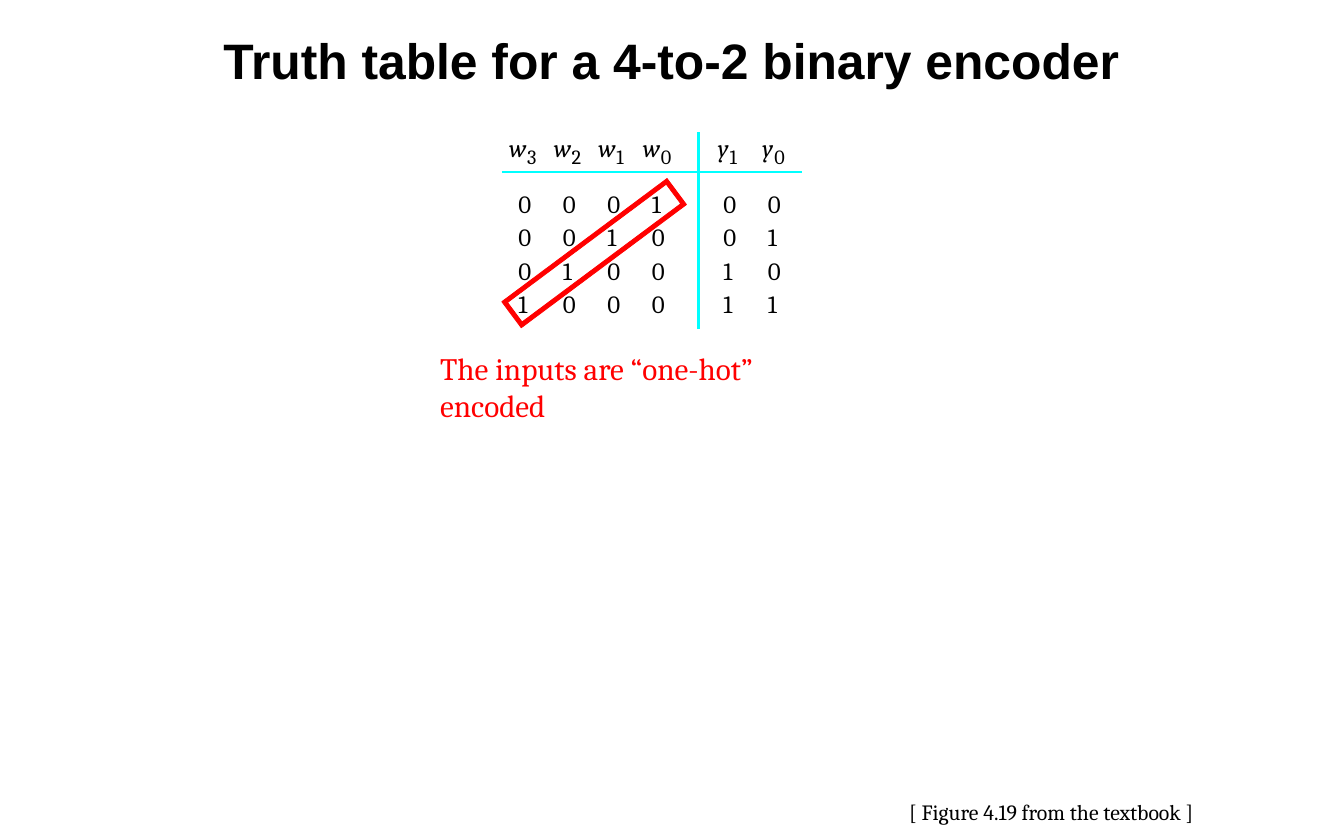
from lxml import etree
from pptx import Presentation
from pptx.dml.color import RGBColor
from pptx.enum import shapes, text
from pptx.oxml.ns import qn
from pptx.util import Pt

FONT = "Cambria"
BLACK, RED, CYAN = "000000", "FF0000", "00FFFF"

# Table grid, in points
COL_STEP, ROW_STEP = 28.65, 21.6
IN_LEFT, OUT_LEFT = 333.2, 465.1
HEAD_TOP, ROW_TOP = 85, 121

INPUTS = ["0001", "0010", "0100", "1000"]
OUTPUTS = ["00", "01", "10", "11"]


def color(value):
    return RGBColor.from_string(value)


def style(p, size, fill, font=FONT, bold=False, italic=False):
    for r in p.runs:
        f = r.font
        f.name, f.size, f.bold, f.italic = font, Pt(size), bold, italic
        f.color.rgb = color(fill)


def add_text(parent, words, x, y, w, h, size, fill=BLACK, italic=False,
             margins=(0, 0), wrap=False):
    sp = parent.add_textbox(Pt(x), Pt(y), Pt(w), Pt(h))
    tf = sp.text_frame
    tf.margin_left = tf.margin_right = Pt(margins[0])
    tf.margin_top = tf.margin_bottom = Pt(margins[1])
    tf.word_wrap = wrap
    tf.auto_size = text.MSO_AUTO_SIZE.SHAPE_TO_FIT_TEXT
    tf.text = words
    style(tf.paragraphs[0], size, fill, italic=italic)


def add_rule(parent, x1, y1, x2, y2):
    line = parent.add_connector(shapes.MSO_CONNECTOR.STRAIGHT,
                                Pt(x1), Pt(y1), Pt(x2), Pt(y2))
    line.line.color.rgb = color(CYAN)
    line.line.width = Pt(1.75)
    etree.SubElement(line._element.spPr, qn("a:effectLst"))


def add_columns(parent, letter, rows, left, indent, sub_gap):
    """Columns of bits under subscripted variable names, highest index first."""
    count = len(rows[0])
    for c in range(count):
        x = left + c * COL_STEP
        add_text(parent, letter, x - indent, HEAD_TOP, 16, 19.4, 16, italic=True)
        add_text(parent, str(count - 1 - c), x - indent + sub_gap, HEAD_TOP + 7.9,
                 10, 15.8, 13)
        for i, bits in enumerate(rows):
            add_text(parent, bits[c], x, ROW_TOP + i * ROW_STEP, 12.2, 19.4, 16)


def add_title(s, words):
    sp = s.shapes.title
    sp.left, sp.top, sp.width, sp.height = Pt(72), Pt(11), Pt(720), Pt(54)
    tf = sp.text_frame
    tf.text = words
    tf.vertical_anchor = text.MSO_ANCHOR.MIDDLE
    tf.paragraphs[0].alignment = text.PP_ALIGN.CENTER
    style(tf.paragraphs[0], 32, BLACK, font="Arial", bold=True)


def add_highlight(s, x, y, w, h, angle):
    sp = s.shapes.add_shape(shapes.MSO_SHAPE.FRAME, Pt(x), Pt(y), Pt(w), Pt(h))
    sp.rotation = angle
    sp.shadow.inherit = False
    sp.fill.solid()
    sp.fill.fore_color.rgb = color(RED)
    sp.line.color.rgb = color(RED)
    sp.line.width = Pt(0.5)


def main():
    prs = Presentation()
    prs.slide_width, prs.slide_height = Pt(864), Pt(540)
    s = prs.slides.add_slide(prs.slide_layouts[5])
    add_title(s, "Truth table for a 4-to-2 binary encoder")

    # Truth table
    table = s.shapes.add_group_shape().shapes
    add_rule(table, 322.6, 110.5, 515.5, 110.5)
    add_rule(table, 449, 85, 449, 211.7)
    add_columns(table, "w", INPUTS, IN_LEFT, 5.8, 11.5)
    add_columns(table, "y", OUTPUTS, OUT_LEFT, 3.6, 7.6)

    # Remark and source
    add_text(s.shapes, "[ Figure 4.19 from the textbook ]", 577.4, 509.8, 200.9, 24.5,
             14, margins=(7.2, 3.6))
    add_text(s.shapes, "The inputs are “one-hot” encoded", 275.8, 221, 286.6, 31.7,
             20, RED, margins=(7.2, 3.6), wrap=True)

    # Frame around the diagonal of ones
    add_highlight(s, 371.5, 96.5, 20.9, 132.5, 53.3)
    prs.save("out.pptx")


if __name__ == "__main__":
    main()
